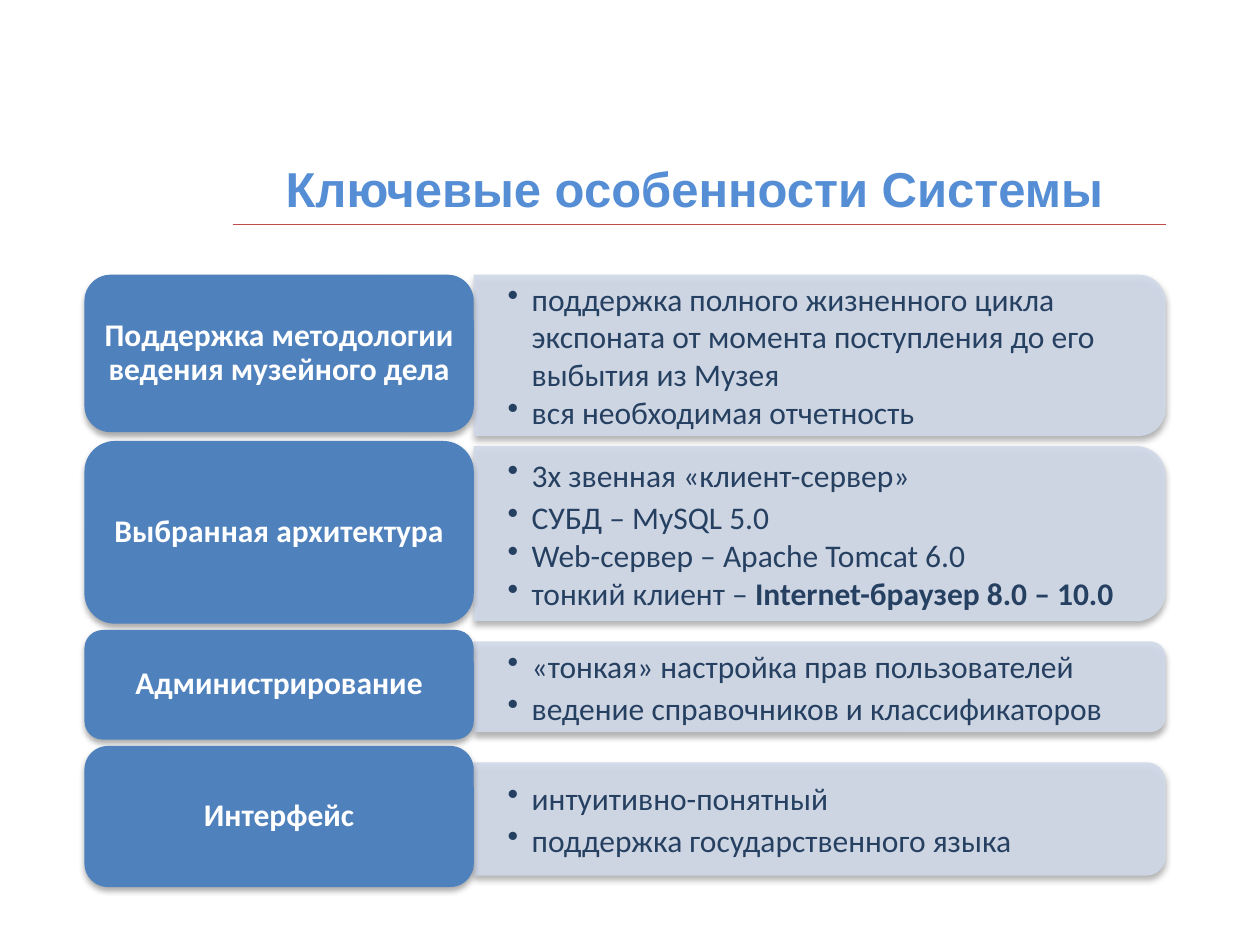
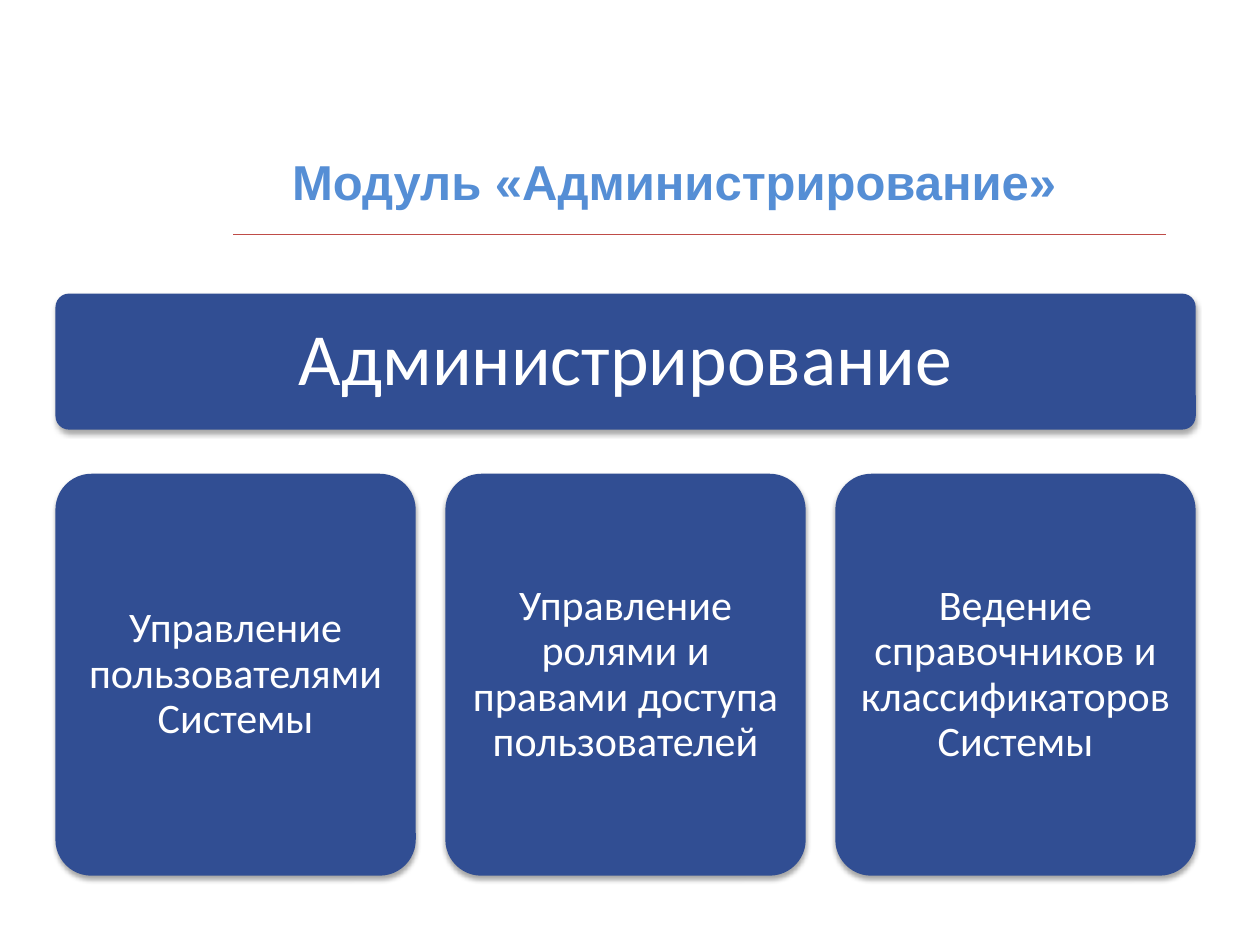
from dataclasses import dataclass
from typing import Any

from lxml import etree
from pptx import Presentation
from pptx.dml.color import RGBColor
from pptx.enum import shapes as es, text as et
from pptx.oxml import ns
from pptx.util import Inches, Pt

HUES = {
    "title": "558ED5", "rule": "BF4C48", "label": "4F81BD",
    "panel": "D0D8E8", "ink": "254061", "card": "314E93",
    "white": "FFFFFF", "shade": "000000",
}
LEFT, EDGE, RIGHT = 0.67, 3.76, 9.25  # label left, label/panel joint, panel right
ROUND = es.MSO_SHAPE.ROUNDED_RECTANGLE
HALF = es.MSO_SHAPE.ROUND_2_SAME_RECTANGLE


@dataclass
class Box:
    x: float
    y: float
    w: float
    h: float

    def inches(self) -> list[Inches]:
        return [Inches(v) for v in (self.x, self.y, self.w, self.h)]


@dataclass
class Shade:
    alpha: int
    blur: float
    dist: float


@dataclass
class Row:
    label: str
    top: float        # label
    high: float
    side: float       # panel
    tall: float
    gap: float        # points after the first item
    items: list[list[tuple[str, bool]]]


DEEP, SOFT = Shade(32, 3.5, 2.2), Shade(35, 3.1, 1.8)

ROWS = [
    Row("Поддержка методологии ведения музейного дела", 2.18, 1.25, 2.18, 1.28, 0, [
        [("поддержка полного жизненного цикла экспоната от момента "
          "поступления до его выбытия из Музея", False)],
        [("вся необходимая отчетность", False)]]),
    Row("Выбранная архитектура", 3.5, 1.45, 3.54, 1.39, 2.7, [
        [("3х звенная «клиент-сервер»", False)],
        [("СУБД – MySQL 5.0", False)],
        [("Web-сервер – Apache Tomcat 6.0", False)],
        [("тонкий клиент – ", False), ("Internet-браузер 8.0 – 10.0", True)]]),
    Row("Администрирование", 5, 0.87, 5.09, 0.72, 2.5, [
        [("«тонкая» настройка прав пользователей", False)],
        [("ведение справочников и классификаторов", False)]]),
    Row("Интерфейс", 5.92, 1.12, 6.05, 0.9, 2.5, [
        [("интуитивно-понятный", False)],
        [("поддержка государственного языка", False)]]),
]

CARDS = [
    "Управление пользователями Системы",
    "Управление ролями и правами доступа пользователей",
    "Ведение справочников и классификаторов Системы",
]


# Helpers
def hue(key: str) -> RGBColor:
    return RGBColor.from_string(HUES[key])


def apply(obj: Any, vals: dict[str, Any]) -> None:
    for key, val in vals.items():
        setattr(obj, key, val)


def node(root: Any, tag: str, **vals: Any) -> Any:
    return etree.SubElement(root, ns.qn(tag), {k: str(v) for k, v in vals.items()})


def style(font: Any, size: float, key: str, face: str = "Calibri", bold: bool = False) -> None:
    apply(font, {"size": Pt(size), "name": face, "bold": bold})
    font.color.rgb = hue(key)


def frame(shape: Any, across: float, down: float) -> Any:
    body = shape.text_frame
    apply(body, {
        "word_wrap": True, "vertical_anchor": et.MSO_ANCHOR.MIDDLE,
        "margin_left": Inches(across), "margin_right": Inches(across),
        "margin_top": Inches(down), "margin_bottom": Inches(down),
    })
    return body


def block(slide: Any, kind: Any, box: Box, key: str, shade: Shade) -> Any:
    """Filled shape without outline, with a soft shadow below."""
    shape = slide.shapes.add_shape(kind, *box.inches())
    shape.fill.solid()
    shape.fill.fore_color.rgb = hue(key)
    shape.line.fill.background()
    shape.shadow.inherit = False
    glow = node(shape._element.spPr.find(ns.qn("a:effectLst")), "a:outerShdw",
                blurRad=Pt(shade.blur), dist=Pt(shade.dist), dir=90 * 60000, rotWithShape=0)
    tint = node(glow, "a:srgbClr", val=HUES["shade"])
    node(tint, "a:alpha", val=shade.alpha * 1000)
    return shape


def tile(slide: Any, box: Box, words: str, key: str, shade: Shade, size: float,
         pad: tuple[float, float], bold: bool = False, curve: float | None = None) -> None:
    """Rounded block with centred white text."""
    shape = block(slide, ROUND, box, key, shade)
    if curve is not None:
        shape.adjustments[0] = curve
    para = frame(shape, *pad).paragraphs[0]
    para.text = words
    apply(para, {"alignment": et.PP_ALIGN.CENTER, "line_spacing": 0.9})
    style(para.font, size, "white", bold=bold)


def panel(slide: Any, row: Row) -> None:
    """Block rounded on its right side, with a bullet list over it."""
    wide = RIGHT - EDGE
    mid = row.side + row.tall / 2
    box = Box((EDGE + RIGHT - row.tall) / 2, mid - wide / 2, row.tall, wide)
    shape = block(slide, HALF, box, "panel", DEEP)
    shape.rotation = 90
    tint = shape._element.spPr.find(ns.qn("a:solidFill"))[0]
    node(tint, "a:alpha", val=90000)

    area = Box(EDGE, row.side + 0.07, wide - 0.06, row.tall - 0.14)
    body = frame(slide.shapes.add_textbox(*area.inches()), 0.27, 0.14)
    for num, item in enumerate(row.items):
        para = body.add_paragraph() if num else body.paragraphs[0]
        props = para._p.get_or_add_pPr()
        apply(para, {"space_after": Pt(0 if num else row.gap)})
        props.set("marL", str(Inches(0.19)))
        props.set("indent", str(-Inches(0.19)))
        node(props, "a:buChar", char="•")
        for words, bold in item:
            run = para.add_run()
            run.text = words
            style(run.font, 18, "ink", bold=bold)


def start(deck: Any, words: str, x: float, y: float, rule: float) -> Any:
    """Blank slide with the title and the thin rule below it."""
    slide = deck.slides.add_slide(deck.slide_layouts[6])
    body = slide.shapes.add_textbox(*Box(x, y, 7.32, 0.57).inches()).text_frame
    apply(body, {"word_wrap": True, "auto_size": et.MSO_AUTO_SIZE.SHAPE_TO_FIT_TEXT})
    para = body.paragraphs[0]
    para.text = words
    para.alignment = et.PP_ALIGN.CENTER
    style(para.font, 28, "title", "Arial", True)

    line = slide.shapes.add_connector(
        es.MSO_CONNECTOR.STRAIGHT, Inches(1.85), Inches(rule), Inches(RIGHT), Inches(rule))
    line.line.color.rgb = hue("rule")
    line.line.width = Pt(0.75)
    node(line._element.spPr, "a:effectLst")
    return slide


def main() -> None:
    deck = Presentation()
    apply(deck, {"slide_width": Inches(10), "slide_height": Inches(7.5)})

    # Key features: a label and a panel per row
    slide = start(deck, "Ключевые особенности Системы", 1.85, 1.21, 1.78)
    for row in ROWS:
        panel(slide, row)
        tile(slide, Box(LEFT, row.top, EDGE - LEFT, row.high), row.label,
             "label", DEEP, 18, (0.07, 0.04), bold=True)

    # Administration module: header over three cards
    slide = start(deck, "Модуль «Администрирование»", 1.69, 1.15, 1.86)
    left, full, wide = 0.44, 9.05, 2.86
    step = (full - wide) / (len(CARDS) - 1)
    tile(slide, Box(left, 2.33, full, 1.08), "Администрирование",
         "card", SOFT, 42, (0.17, 0.17), curve=0.1)
    for num, words in enumerate(CARDS):
        tile(slide, Box(left + num * step, 3.76, wide, 3.19), words,
             "card", SOFT, 24, (0.1, 0.1), curve=0.1)

    deck.save("out.pptx")


if __name__ == "__main__":
    main()
